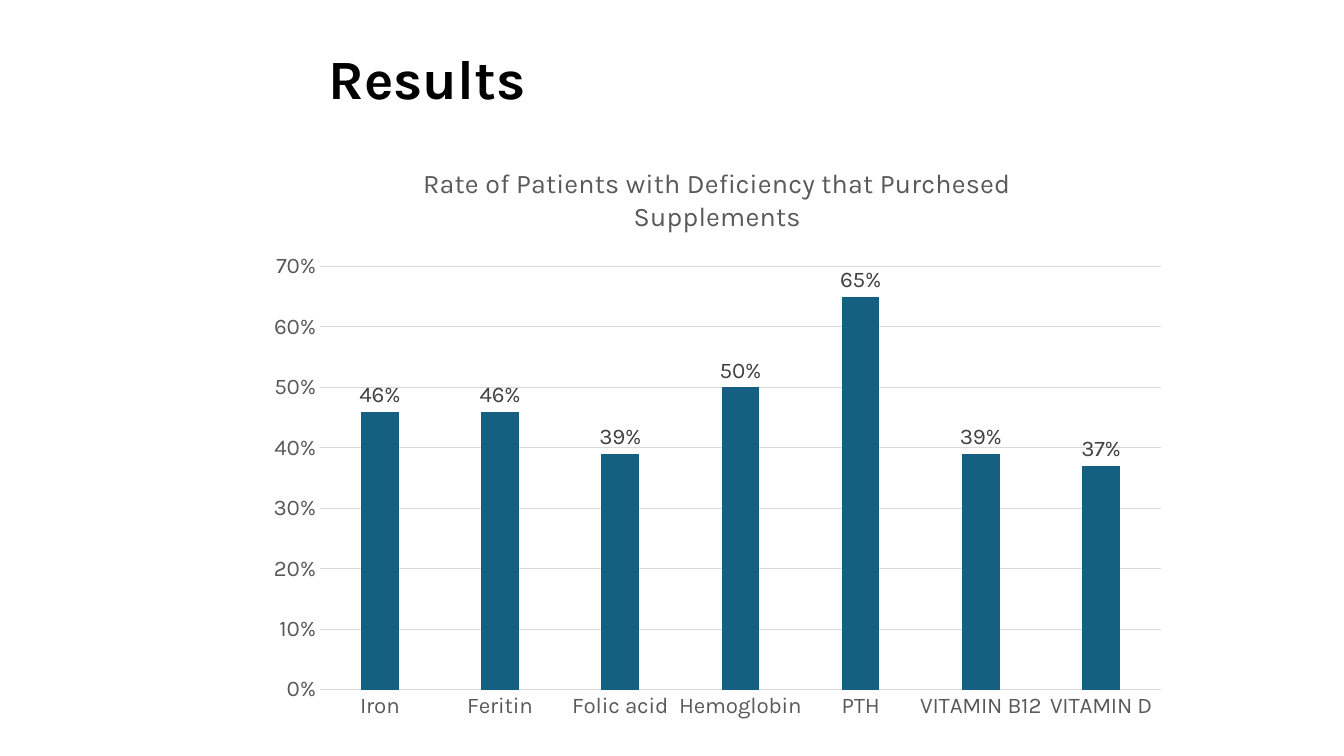
from lxml import etree
from pptx import Presentation
from pptx.chart.data import CategoryChartData
from pptx.dml.color import RGBColor
from pptx.enum.chart import XL_CHART_TYPE, XL_LABEL_POSITION, XL_TICK_MARK
from pptx.enum.text import MSO_ANCHOR, MSO_AUTO_SIZE, PP_ALIGN
from pptx.oxml.ns import qn
from pptx.util import Inches, Pt

COLUMN_CLUSTERED = XL_CHART_TYPE.COLUMN_CLUSTERED
OUTSIDE_END = XL_LABEL_POSITION.OUTSIDE_END
NO_TICK = XL_TICK_MARK.NONE
MIDDLE = MSO_ANCHOR.MIDDLE
NO_AUTOFIT = MSO_AUTO_SIZE.NONE
CENTER = PP_ALIGN.CENTER

DEFICIENCY_RATES = {
    "Iron": 0.46,
    "Feritin": 0.46,
    "Folic acid": 0.39,
    "Hemoglobin": 0.5,
    "PTH": 0.65,
    "VITAMIN B12": 0.39,
    "VITAMIN D": 0.37,
}


def color(hex_value):
    return RGBColor.from_string(hex_value)


class ResultsSlide:
    font_name = "Karla"
    title_color = "000000"
    axis_color = "595959"
    label_color = "404040"
    line_color = "D9D9D9"
    bar_color = "156082"

    def __init__(self, presentation):
        self.slide = presentation.slides.add_slide(presentation.slide_layouts[5])

    def style_font(self, font, size, hex_value, bold=False):
        font.name = self.font_name
        font.size = Pt(size)
        font.bold = bold
        font.color.rgb = color(hex_value)

    def style_line(self, line):
        line.color.rgb = color(self.line_color)
        line.width = Pt(0.75)

    def add_title(self, text, left, top, width, height):
        title = self.slide.shapes.title
        title.left, title.top = Inches(left), Inches(top)
        title.width, title.height = Inches(width), Inches(height)
        text_frame = title.text_frame
        text_frame.text = text
        text_frame.auto_size = NO_AUTOFIT
        text_frame.vertical_anchor = MIDDLE
        text_frame.margin_left = text_frame.margin_right = Inches(0.1)
        text_frame.margin_top = text_frame.margin_bottom = Inches(0.1)
        paragraph = text_frame.paragraphs[0]
        paragraph.alignment = CENTER
        paragraph.line_spacing = 0.9
        self.style_font(paragraph.runs[0].font, 39.6, self.title_color, True)

    def add_column_chart(self, heading, rates, left, top, width, height):
        chart_data = CategoryChartData(number_format="0%")
        chart_data.categories = list(rates)
        chart_data.add_series("Series 1", list(rates.values()))
        chart = self.slide.shapes.add_chart(
            COLUMN_CLUSTERED, Inches(left), Inches(top),
            Inches(width), Inches(height), chart_data,
        ).chart
        self.style_font(chart.font, 16, self.title_color)
        chart.has_legend = False
        chart.has_title = True
        chart.chart_title.include_in_layout = False
        chart.chart_title.text_frame.text = heading
        heading_run = chart.chart_title.text_frame.paragraphs[0].runs[0]
        self.style_font(heading_run.font, 19.2, self.axis_color)
        self.style_axes(chart)
        self.style_columns(chart.plots[0])
        self.place_plot(chart, x=0.07, y=0.21, w=0.91, h=0.72)

    def style_axes(self, chart):
        for axis in (chart.category_axis, chart.value_axis):
            axis.major_tick_mark = axis.minor_tick_mark = NO_TICK
            self.style_font(axis.tick_labels.font, 16, self.axis_color)
        self.style_line(chart.category_axis.format.line)
        value_axis = chart.value_axis
        value_axis.minimum_scale = 0
        value_axis.maximum_scale = 0.7
        value_axis.major_unit = 0.1
        value_axis.format.line.fill.background()
        value_axis.has_major_gridlines = True
        self.style_line(value_axis.major_gridlines.format.line)
        value_axis.tick_labels.number_format = "0%"
        value_axis.tick_labels.number_format_is_linked = False

    def style_columns(self, plot):
        plot.gap_width = 219
        plot.overlap = -27
        plot.vary_by_categories = False
        series = plot.series[0]
        series.format.fill.solid()
        series.format.fill.fore_color.rgb = color(self.bar_color)
        labels = series.data_labels
        labels.show_value = True
        labels.position = OUTSIDE_END
        labels.number_format = "0%"
        labels.number_format_is_linked = False
        self.style_font(labels.font, 16, self.label_color)

    def place_plot(self, chart, **fractions):
        plot_area = chart.element.find(".//" + qn("c:plotArea"))
        layout = plot_area.find(qn("c:layout"))
        if layout is None:
            layout = etree.Element(qn("c:layout"))
            plot_area.insert(0, layout)
        manual_layout = etree.SubElement(layout, qn("c:manualLayout"))
        settings = {"layoutTarget": "inner", "xMode": "edge", "yMode": "edge", **fractions}
        for name, value in settings.items():
            etree.SubElement(manual_layout, qn("c:" + name)).set("val", str(value))


def main():
    presentation = Presentation()
    presentation.slide_width = Inches(13.33)
    presentation.slide_height = Inches(7.5)
    results = ResultsSlide(presentation)
    results.add_title("Results", 0.45, 0.39, 7.57, 0.84)
    results.add_column_chart(
        "Rate of Patients with Deficiency that Purchesed Supplements",
        DEFICIENCY_RATES, 2.53, 1.42, 9.17, 5.83,
    )
    presentation.save("out.pptx")


if __name__ == "__main__":
    main()
